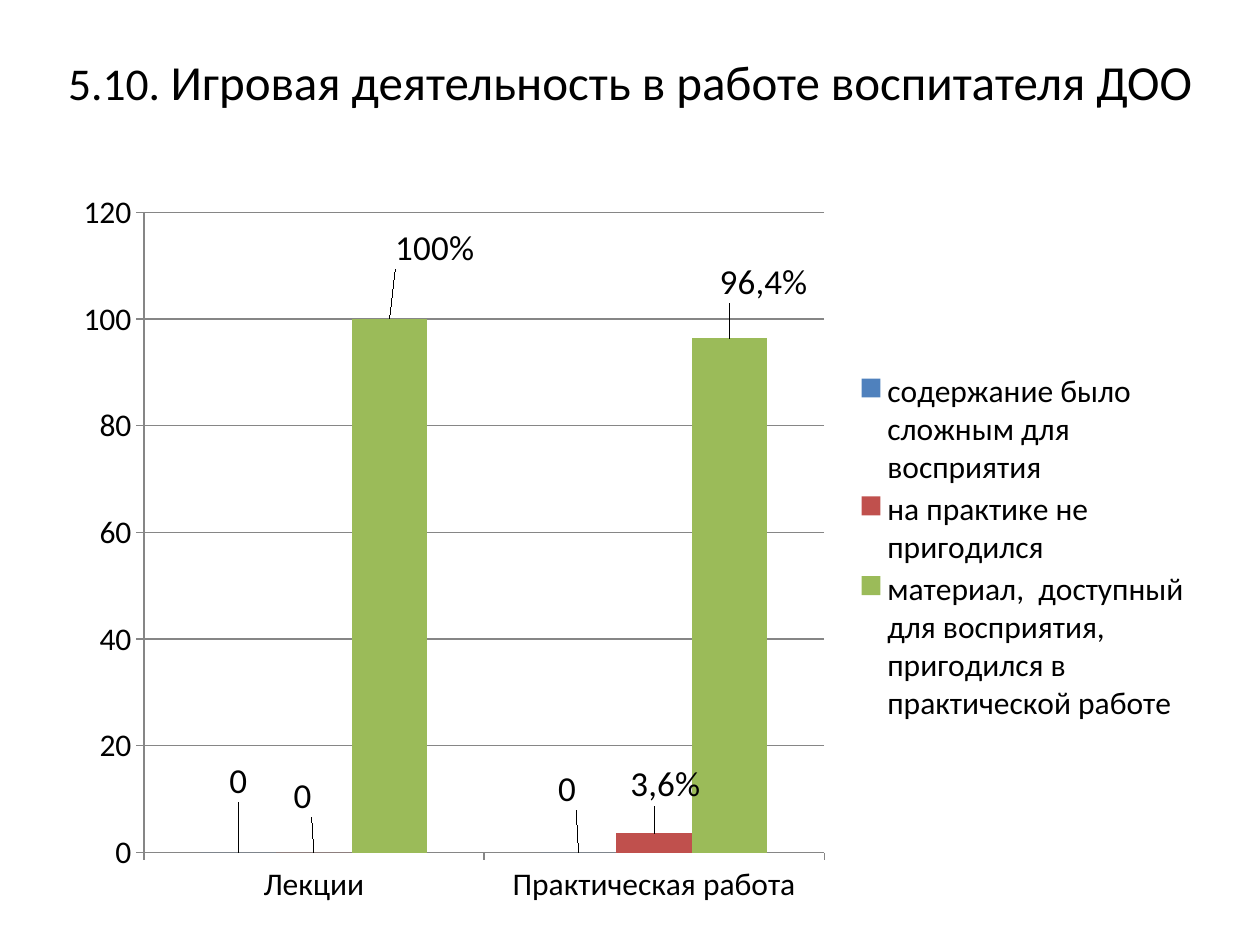
from lxml import etree
from pptx import Presentation
from pptx.chart.data import CategoryChartData
from pptx.dml.color import RGBColor
from pptx.enum.chart import XL_CHART_TYPE as ChartType
from pptx.enum.chart import XL_LABEL_POSITION as LabelPosition
from pptx.enum.chart import XL_LEGEND_POSITION as LegendPosition
from pptx.enum.chart import XL_TICK_MARK as TickMark
from pptx.enum.text import MSO_ANCHOR, PP_ALIGN
from pptx.oxml.ns import qn
from pptx.util import Cm, Pt

FONT = "Calibri"
BLACK = "000000"
GRID = "868686"
TITLE = [("5.10. ", 26), ("Игровая деятельность в работе воспитателя ДОО", 28)]
CATEGORIES = ["Лекции", "Практическая работа"]
SERIES = [
    {"name": "содержание было сложным для восприятия", "color": "4F81BD",
     "values": [0, 0], "labels": [None, None],
     "offsets": [(0, -0.06), (-0.01, -0.05)]},
    {"name": "на практике не пригодился", "color": "C0504D",
     "values": [0, 3.6], "labels": [None, "3,6%"],
     "offsets": [(-0.01, -0.04), (0.01, -0.03)]},
    {"name": "материал,  доступный для восприятия, пригодился в практической работе",
     "color": "9BBB59", "values": [100, 96.4], "labels": ["100%", "96,4%"],
     "offsets": [(0.04, -0.06), (0.03, -0.04)]},
]
PLOT_AREA = {"layoutTarget": "inner", "xMode": "edge", "yMode": "edge",
             "x": 0.07, "y": 0.05, "w": 0.6, "h": 0.86}
LEGEND_AREA = {"xMode": "edge", "yMode": "edge",
               "x": 0.69, "y": 0.26, "w": 0.31, "h": 0.48}


def color(value):
    return RGBColor.from_string(value)


def style_font(font, size):
    font.name = FONT
    font.size = Pt(size)
    font.color.rgb = color(BLACK)


def set_layout(element, index, settings):
    for old in element.findall(qn("c:layout")):
        element.remove(old)
    layout = etree.Element(qn("c:layout"))
    manual = etree.SubElement(layout, qn("c:manualLayout"))
    for name, value in settings.items():
        etree.SubElement(manual, qn(f"c:{name}")).set("val", str(value))
    element.insert(index, layout)


def add_title(slide):
    box = slide.shapes.add_textbox(Cm(0.5), Cm(0.76), Cm(24.4), Cm(1.75))
    frame = box.text_frame
    frame.word_wrap = True
    frame.vertical_anchor = MSO_ANCHOR.MIDDLE
    paragraph = frame.paragraphs[0]
    paragraph.alignment = PP_ALIGN.CENTER
    for text, size in TITLE:
        run = paragraph.add_run()
        run.text = text
        style_font(run.font, size)


def style_series(series, content):
    series.format.fill.solid()
    series.format.fill.fore_color.rgb = color(content["color"])
    series.invert_if_negative = False
    labels = series.data_labels
    labels.show_value = True
    labels.position = LabelPosition.OUTSIDE_END
    style_font(labels.font, 20)
    for index, text in enumerate(content["labels"]):
        label = series.points[index].data_label
        if text:
            label.text_frame.text = text
            style_font(label.text_frame.paragraphs[0].runs[0].font, 20)
        else:
            style_font(label.font, 20)
        label.position = LabelPosition.OUTSIDE_END
    for element, (x, y) in zip(series._element.iter(qn("c:dLbl")), content["offsets"]):
        set_layout(element, 1, {"x": x, "y": y})


def add_chart(slide):
    data = CategoryChartData()
    data.categories = CATEGORIES
    for content in SERIES:
        data.add_series(content["name"], content["values"])
    chart = slide.shapes.add_chart(ChartType.COLUMN_CLUSTERED, Cm(1.3), Cm(3.53),
                                   Cm(22.86), Cm(15.01), data).chart
    style_font(chart.font, 18)
    chart.has_title = False
    plot = chart.plots[0]
    plot.gap_width = 150
    plot.overlap = 0
    plot.vary_by_categories = False
    for series, content in zip(plot.series, SERIES):
        style_series(series, content)

    value_axis = chart.value_axis
    value_axis.minimum_scale = 0
    value_axis.maximum_scale = 120
    value_axis.major_unit = 20
    value_axis.has_major_gridlines = True
    for axis in (value_axis, chart.category_axis):
        axis.major_tick_mark = TickMark.OUTSIDE
    for owner in (value_axis, chart.category_axis, value_axis.major_gridlines):
        owner.format.line.color.rgb = color(GRID)
        owner.format.line.width = Pt(0.75)

    chart.has_legend = True
    chart.legend.position = LegendPosition.RIGHT
    chart.legend.include_in_layout = False
    style_font(chart.legend.font, 18)
    root = chart._chartSpace
    set_layout(root.find(".//" + qn("c:plotArea")), 0, PLOT_AREA)
    set_layout(root.find(".//" + qn("c:legend")), 1, LEGEND_AREA)


def main():
    presentation = Presentation()
    presentation.slide_width = Cm(25.4)
    presentation.slide_height = Cm(19.05)
    slide = presentation.slides.add_slide(presentation.slide_layouts[6])
    add_title(slide)
    add_chart(slide)
    presentation.save("out.pptx")


if __name__ == "__main__":
    main()
